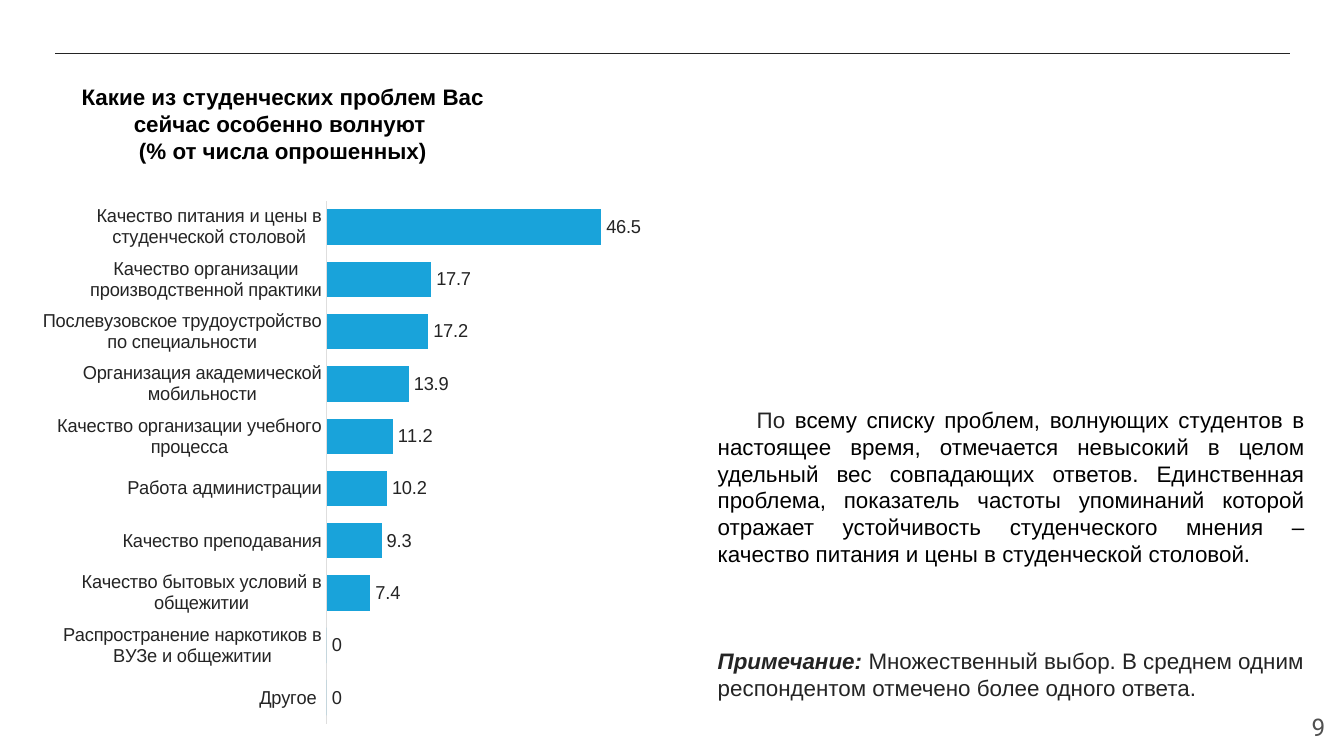
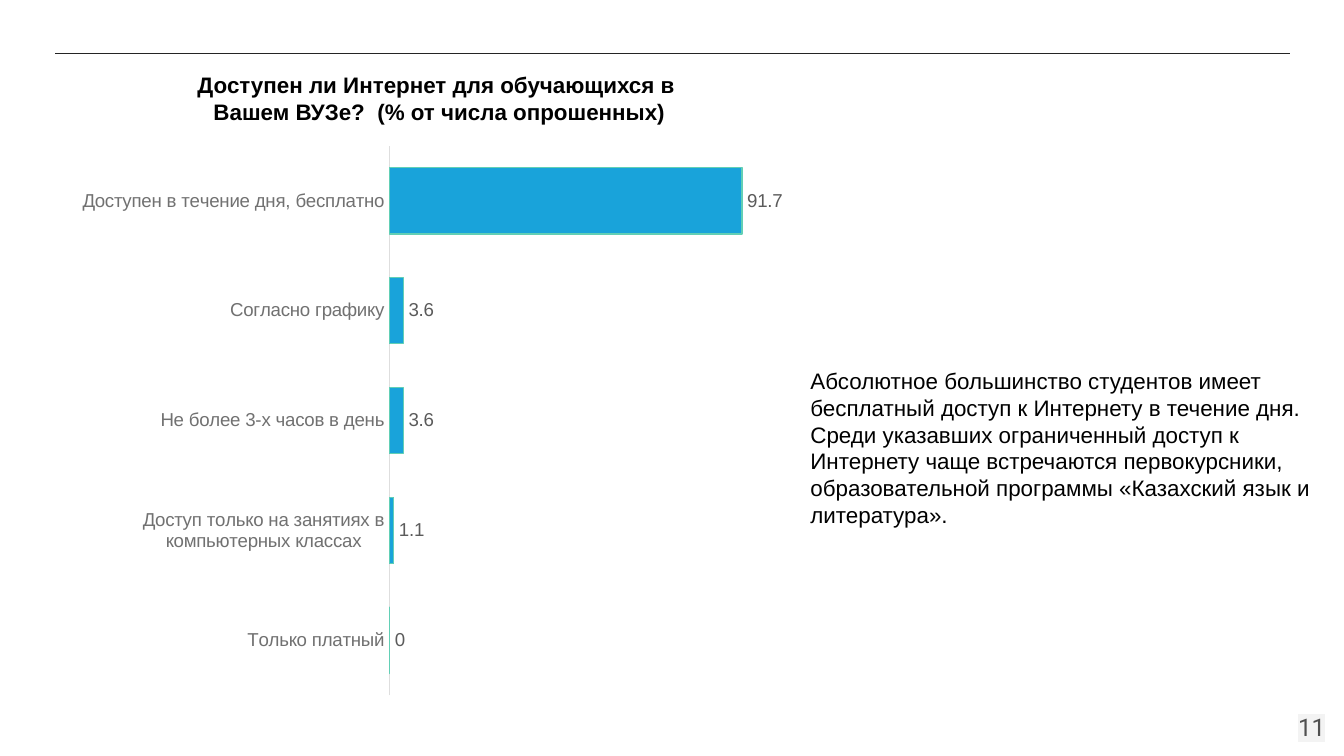
from lxml import etree
from pptx import Presentation
from pptx.chart.data import CategoryChartData
from pptx.dml.color import RGBColor
from pptx.enum.chart import (XL_CHART_TYPE, XL_LABEL_POSITION,
                             XL_TICK_LABEL_POSITION, XL_TICK_MARK)
from pptx.enum.shapes import MSO_CONNECTOR
from pptx.enum.text import MSO_ANCHOR, MSO_AUTO_SIZE, PP_ALIGN
from pptx.oxml import parse_xml
from pptx.oxml.ns import nsdecls, qn
from pptx.util import Inches, Pt

LEFT, CENTER, RIGHT, JUSTIFY = (PP_ALIGN.LEFT, PP_ALIGN.CENTER,
                                PP_ALIGN.RIGHT, PP_ALIGN.JUSTIFY)
TOP, MIDDLE = MSO_ANCHOR.TOP, MSO_ANCHOR.MIDDLE
BAR, OUTSIDE = XL_CHART_TYPE.BAR_CLUSTERED, XL_LABEL_POSITION.OUTSIDE_END
NO_TICK, NEXT_TO = XL_TICK_MARK.NONE, XL_TICK_LABEL_POSITION.NEXT_TO_AXIS

W = 10
H = W * 9 / 16
FONT, NUMBER_FONT = "Arial", "Roboto"
COLORS = {"ink": "242424", "black": "000000", "page": "505050",
          "highlight": "F3F3F3", "bar": "19A3DA", "bar_edge": "62CFB5",
          "axis": "DEDEDE", "category": "717171", "value": "5B5B5B"}

# Content: a paragraph is a list of (text, format) runs plus its own layout
SLIDES = [
    {"number": "9", "number_format": {},
     "title_box": (0.2, 0.52, 3.81, 0.81),
     "title": ["Какие из студенческих проблем Вас сейчас особенно волнуют ",
               "(% от числа опрошенных)"],
     "body_box": (5.24, 2.92, 4.57, 2.43),
     "body": [
         {"align": JUSTIFY, "indent": 0.29, "runs": [
             ("По ", {"color": "ink"}),
             ("всему списку проблем, волнующих студентов в настоящее время, "
              "отмечается невысокий в целом удельный вес совпадающих ответов. "
              "Единственная проблема, показатель частоты упоминаний которой "
              "отражает устойчивость студенческого мнения – качество питания "
              "и цены в студенческой столовой. ", {})]},
         {"before": 43, "runs": [
             ("Примечание: ", {"color": "ink", "bold": True, "italic": True}),
             ("Множественный выбор. В среднем одним респондентом отмечено "
              "более одного ответа.", {"color": "ink"})]}],
     "chart_box": (0.19, 1.33, 4.58, 4.14),
     "plot": (0.5, 0.04, 0.5, 0.94), "gap": 48, "maximum": 51,
     "category_color": "ink", "value_color": "ink", "edge": None,
     "data": [
         ("Другое ", 0),
         ("Распространение наркотиков в ВУЗе и общежитии", 0),
         ("Качество бытовых условий в общежитии", 7.4),
         ("Качество преподавания", 9.3),
         ("Работа администрации", 10.2),
         ("Качество организации учебного процесса", 11.2),
         ("Организация академической мобильности", 13.9),
         ("Послевузовское трудоустройство по специальности", 17.2),
         ("Качество организации производственной практики", 17.7),
         ("Качество питания и цены в студенческой столовой", 46.5)]},
    {"number": "11", "number_format": {"highlight": "highlight"},
     "title_box": (0.76, 0.43, 5.02, 0.6),
     "title": ["Доступен ли Интернет для обучающихся в ",
               "Вашем ВУЗе?  (% от числа опрошенных)"],
     "body_box": (5.93, 2.63, 3.97, 1.4),
     "body": [
         {"runs": [
             ("Абсолютное большинство студентов имеет бесплатный доступ к "
              "Интернету в течение дня. Среди указавших ограниченный доступ к "
              "Интернету чаще встречаются первокурсники, образовательной "
              "программы «Казахский язык и литература».", {})]}],
     "chart_box": (0.21, 1.08, 5.72, 4.31),
     "plot": (0.47, 0, 0.5, 0.95), "gap": 66, "maximum": 100,
     "category_color": "category", "value_color": "value", "edge": "bar_edge",
     "data": [
         ("Только платный", 0),
         ("Доступ только на занятиях в компьютерных классах", 1.1),
         ("Не более 3-х часов в день", 3.6),
         ("Согласно графику", 3.6),
         ("Доступен в течение дня, бесплатно", 91.7)]},
]


def rgb(name):
    return RGBColor.from_string(COLORS[name])


def place(sp, box):
    sp.left, sp.top, sp.width, sp.height = (Inches(v) for v in box)


def style_font(font, size=12, color="black", bold=False, italic=False,
               name=FONT):
    font.size, font.bold, font.italic, font.name = Pt(size), bold, italic, name
    font.color.rgb = rgb(color)


def add_run(p, text, highlight=None, **font_format):
    r = p.add_run()
    r.text = text
    style_font(r.font, **font_format)
    if highlight:
        mark = parse_xml(f'<a:highlight {nsdecls("a")}><a:srgbClr '
                         f'val="{COLORS[highlight]}"/></a:highlight>')
        # The highlight follows the solid fill
        r._r.rPr.find(qn("a:solidFill")).addnext(mark)


def fill_text(sp, box, paragraphs, anchor=TOP):
    """Place a text shape and write its paragraphs."""
    place(sp, box)
    tf = sp.text_frame
    tf.word_wrap, tf.auto_size = True, MSO_AUTO_SIZE.NONE
    tf.vertical_anchor = anchor
    tf.margin_left = tf.margin_right = Inches(0.1)
    tf.margin_top = tf.margin_bottom = Inches(0.1)
    for i, item in enumerate(paragraphs):
        p = tf.add_paragraph() if i else tf.paragraphs[0]
        p.alignment = item.get("align", LEFT)
        p.line_spacing = 1.0
        p.space_before, p.space_after = Pt(item.get("before", 0)), Pt(0)
        pPr = p._p.get_or_add_pPr()
        pPr.set("marL", "0")
        pPr.set("indent", str(Inches(item.get("indent", 0))))
        etree.SubElement(pPr, qn("a:buNone"))
        for text, font_format in item["runs"]:
            add_run(p, text, **font_format)


def add_rule(slide):
    line = slide.shapes.add_connector(
        MSO_CONNECTOR.STRAIGHT, Inches(0.41), Inches(0.4),
        Inches(W - 0.4), Inches(0.4))
    line.line.color.rgb, line.line.width = rgb("ink"), Pt(0.75)
    etree.SubElement(line._element.spPr, qn("a:effectLst"))


def set_plot_layout(chart, plot):
    """Fix the inner plot area, as shares of the chart."""
    area = chart._chartSpace.chart.plotArea
    for old in area.findall(qn("c:layout")):
        area.remove(old)
    modes = '<c:xMode val="edge"/><c:yMode val="edge"/>'
    shares = "".join(f'<c:{k} val="{v}"/>' for k, v in zip("xywh", plot))
    area.insert(0, parse_xml(
        f'<c:layout {nsdecls("c")}><c:manualLayout>'
        f'<c:layoutTarget val="inner"/>{modes}{shares}'
        f'</c:manualLayout></c:layout>'))


def add_bar_chart(slide, info):
    cats, values = zip(*info["data"])
    data = CategoryChartData()
    data.categories = cats
    data.add_series("Series 1", values)
    box = [Inches(v) for v in info["chart_box"]]
    chart = slide.shapes.add_chart(BAR, *box, data).chart
    chart.has_legend = chart.has_title = False
    style_font(chart.font, size=10, color="ink")
    set_plot_layout(chart, info["plot"])

    # Axes
    axis = chart.category_axis
    axis.major_tick_mark = axis.minor_tick_mark = NO_TICK
    axis.tick_label_position = NEXT_TO
    axis.format.line.color.rgb = rgb("axis")
    axis.format.line.width = Pt(0.75)
    style_font(axis.tick_labels.font, size=10, color=info["category_color"])
    scale = chart.value_axis
    scale.minimum_scale, scale.maximum_scale = 0, info["maximum"]
    scale.major_tick_mark = scale.minor_tick_mark = NO_TICK
    scale.has_major_gridlines = scale.visible = False

    # Bars and their labels
    plot = chart.plots[0]
    plot.gap_width, plot.vary_by_categories = info["gap"], False
    bars = plot.series[0]
    bars.format.fill.solid()
    bars.format.fill.fore_color.rgb = rgb("bar")
    if info["edge"]:
        bars.format.line.color.rgb = rgb(info["edge"])
        bars.format.line.width = Pt(0.75)
    labels = bars.data_labels
    labels.show_value, labels.position = True, OUTSIDE
    style_font(labels.font, size=10, color=info["value_color"])


def build_slide(prs, info):
    slide = prs.slides.add_slide(prs.slide_layouts[1])
    title, body = slide.placeholders
    add_rule(slide)
    fill_text(title, info["title_box"],
              [{"align": CENTER, "runs": [(text, {"bold": True})]}
               for text in info["title"]])
    fill_text(body, info["body_box"], info["body"])
    add_bar_chart(slide, info)
    number = slide.shapes.add_textbox(0, 0, 0, 0)
    number_format = {"size": 13, "name": NUMBER_FONT, "color": "page",
                     **info["number_format"]}
    fill_text(number, (9.36, 5.19, 0.6, 0.43),
              [{"align": RIGHT, "runs": [(info["number"], number_format)]}],
              anchor=MIDDLE)


def main():
    prs = Presentation()
    prs.slide_width, prs.slide_height = Inches(W), Inches(H)
    for info in SLIDES:
        build_slide(prs, info)
    prs.save("out.pptx")


if __name__ == "__main__":
    main()
